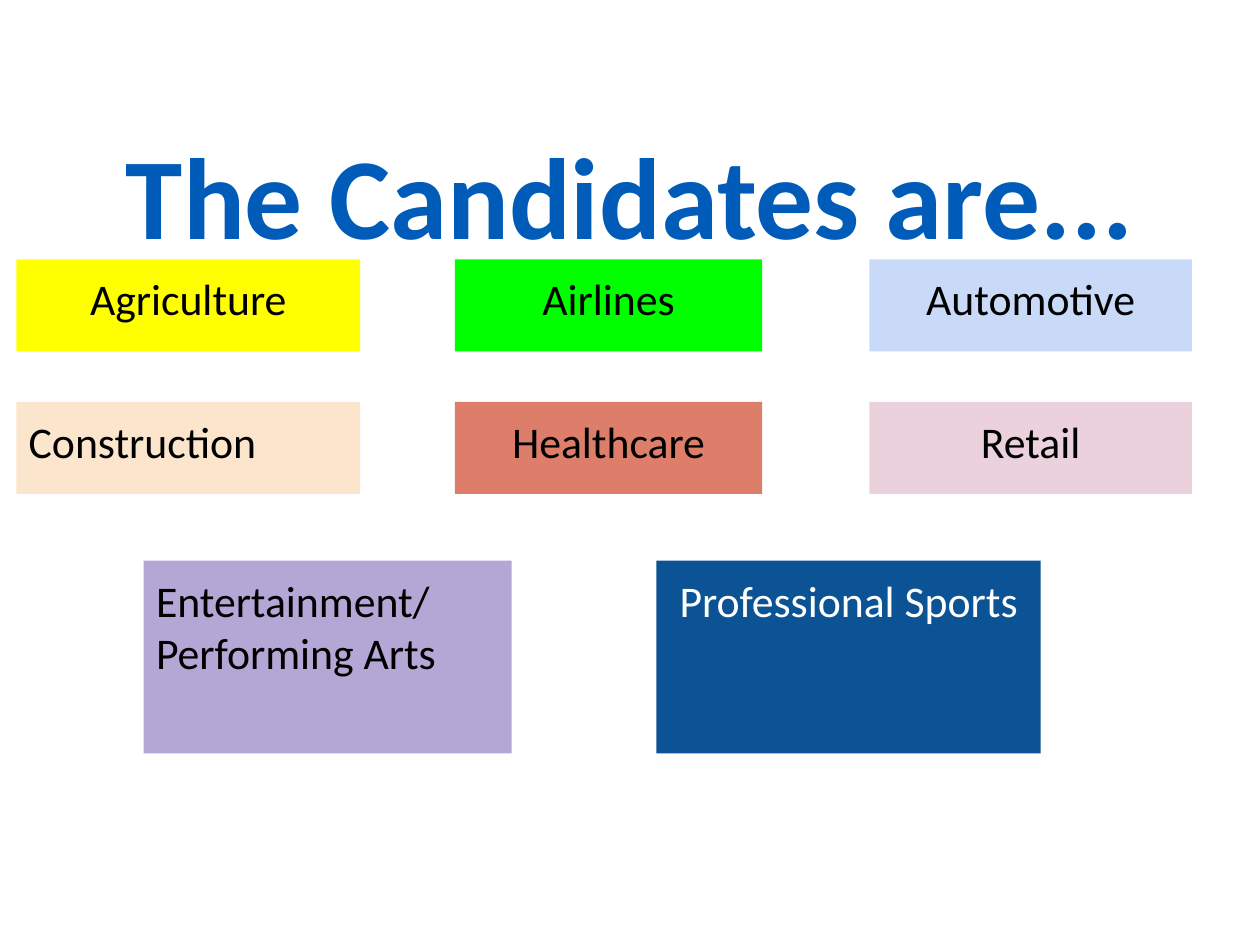
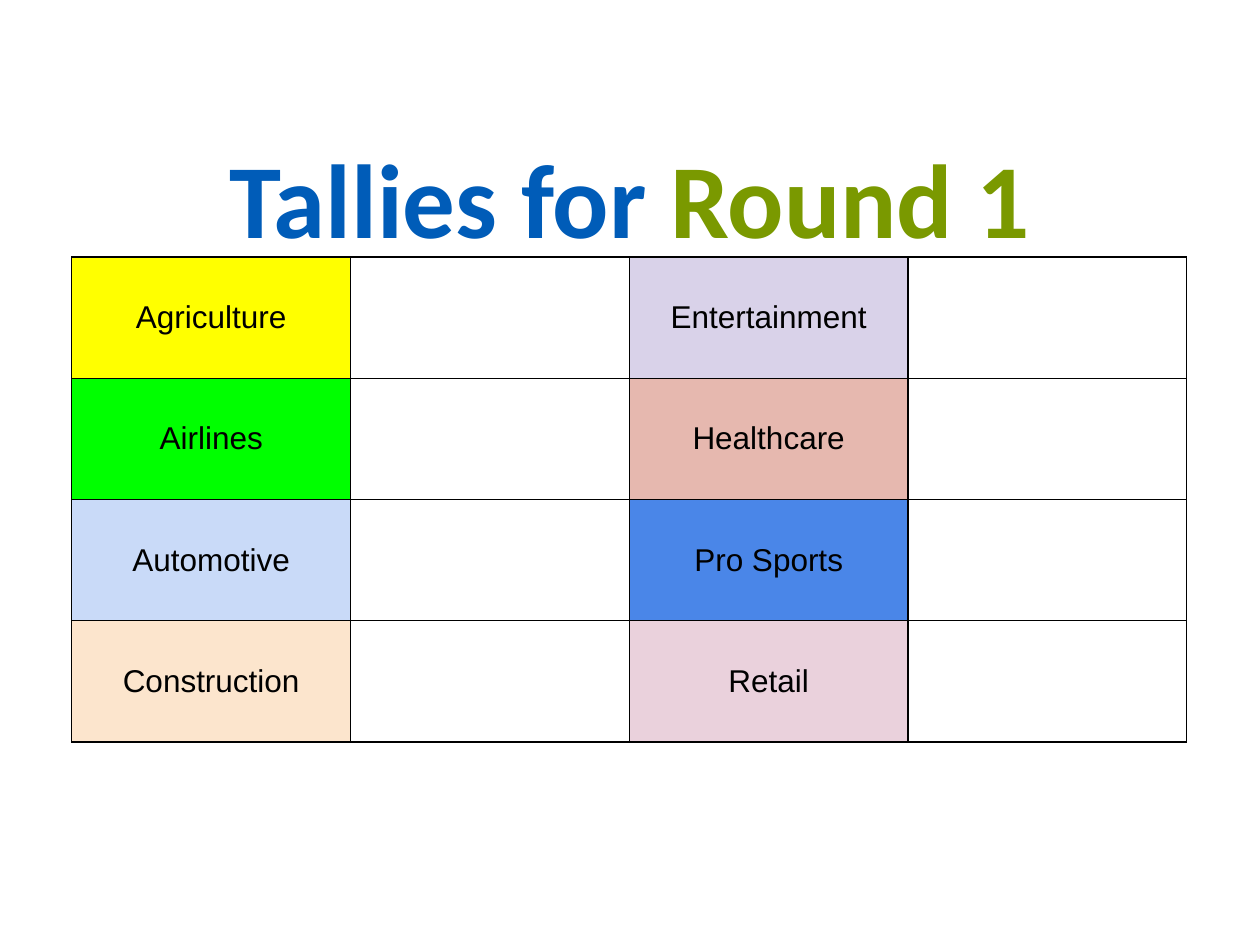
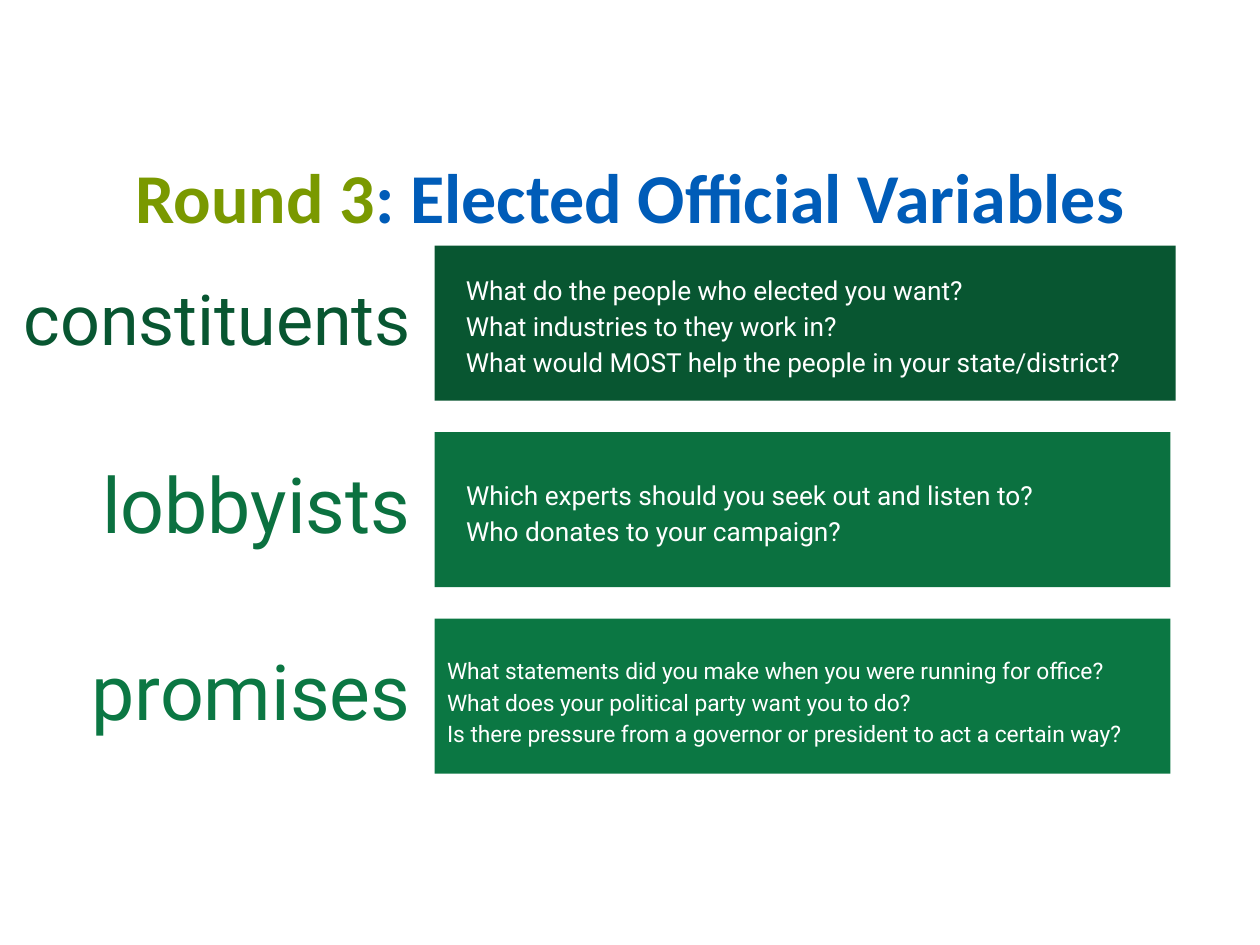
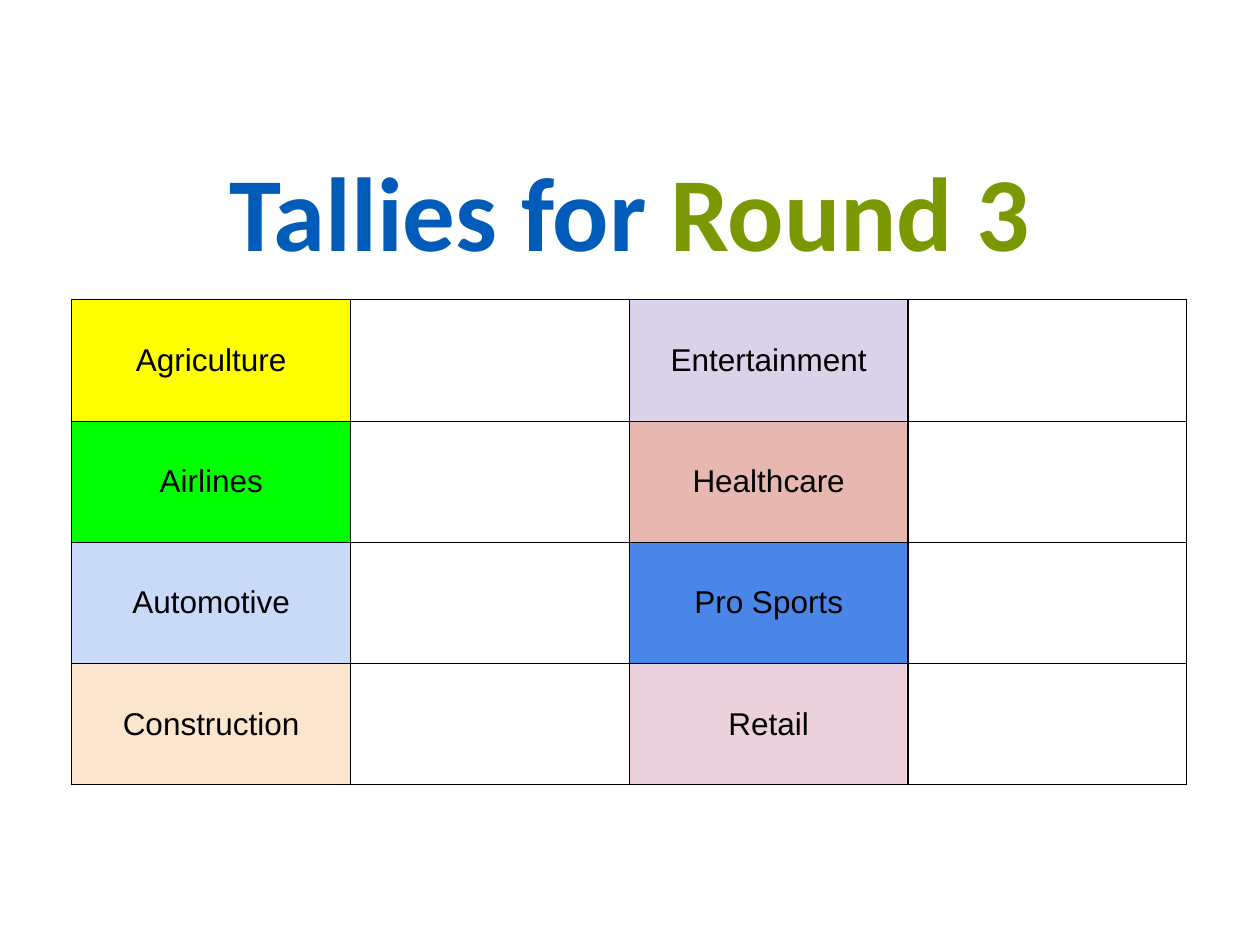
from dataclasses import dataclass

from lxml.etree import SubElement
from pptx import Presentation
from pptx.dml.color import RGBColor
from pptx.enum.shapes import MSO_SHAPE
from pptx.enum.text import MSO_ANCHOR, PP_ALIGN
from pptx.oxml.ns import qn
from pptx.util import Inches, Pt


@dataclass(frozen=True)
class Theme:
    """Colours, fonts and type sizes shared by the slides."""
    blue: str = "005CB8"
    olive: str = "7A9900"
    black: str = "000000"
    white: str = "FFFFFF"
    yellow: str = "FFFF00"
    lime: str = "00FF00"
    sky: str = "C9DAF8"
    peach: str = "FCE5CD"
    coral: str = "DD7E6B"
    pink: str = "EAD1DC"
    purple: str = "B4A7D6"
    navy: str = "0B5394"
    lilac: str = "D9D2E9"
    salmon: str = "E6B8AF"
    azure: str = "4A86E8"
    greens: tuple = ("085631", "0B7140", "0B7743")
    heading: str = "Calibri"
    table: str = "Arial"
    variable: str = "Roboto"
    card_size: int = 25
    table_size: int = 18
    tally_size: int = 60
    title_line: int = 57


T = Theme()
COLUMNS, ROWS = 10, 7.5
CARD_COLUMNS = ((0.13, 2.73), (3.61, 2.44), (6.9, 2.56))
WIDE_COLUMNS = ((1.14, 2.92), (5.21, 3.05))
CARD_TOP, CARD_PITCH, CARD_HEIGHT = 2.06, 1.13, 0.73
WIDE_TOP, WIDE_HEIGHT = 4.45, 1.53
BAND_LEFT, BAND_TOP, BAND_PITCH, BAND_HEIGHT = 3.45, 1.95, 1.48, 1.23
LABEL_RIGHT, LABEL_HEIGHT = 3.36, 1.06
TABLE_LEFT, TABLE_WIDTH, TABLE_HEIGHT = 0.57, 8.85, 3.85

TALLIES = (
    (("Agriculture", T.yellow), ("Entertainment", T.lilac)),
    (("Airlines", T.lime), ("Healthcare", T.salmon)),
    (("Automotive", T.sky), ("Pro Sports", T.azure)),
    (("Construction", T.peach), ("Retail", T.pink)),
)


def grid(*cells):
    """Turn columns and rows of the one-inch grid into lengths."""
    return [Inches(c) for c in cells]


def style(font, name, size, color, bold=False):
    """Set the look of a font."""
    font.name, font.size, font.bold = name, Pt(size), bold
    font.color.rgb = RGBColor.from_string(color)


def write(s, lines, name, size, color, align=PP_ALIGN.LEFT, anchor=MSO_ANCHOR.TOP,
          spacing=None, inset=0.1):
    """Fill a shape with one paragraph per line."""
    tf = s.text_frame
    tf.word_wrap, tf.vertical_anchor = True, anchor
    tf.margin_left = tf.margin_right = Inches(0.1)
    tf.margin_top = tf.margin_bottom = Inches(inset)
    tf.text = "\n".join(lines)
    for p in tf.paragraphs:
        p.alignment, p.line_spacing = align, spacing
        for r in p.runs:
            style(r.font, name, size, color)


def add_title(slide, top, size, *parts):
    """Add a centred bold title made of coloured parts."""
    s = slide.shapes.add_textbox(*grid(0.34, top, 9.32, 0.88))
    write(s, [""], T.heading, size, T.blue, PP_ALIGN.CENTER, spacing=Pt(T.title_line))
    for text, color in parts:
        r = s.text_frame.paragraphs[0].add_run()
        r.text = text
        style(r.font, T.heading, size, color, bold=True)


def add_block(slide, fill, *place):
    """Add a plain filled rectangle."""
    s = slide.shapes.add_shape(MSO_SHAPE.RECTANGLE, *grid(*place))
    s.shadow.inherit = False
    s.fill.solid()
    s.fill.fore_color.rgb = RGBColor.from_string(fill)
    s.line.fill.background()
    return s


def add_card(slide, place, fill, lines, align=PP_ALIGN.CENTER, color=T.black):
    """Add a candidate card."""
    s = add_block(slide, fill, *place)
    write(s, lines, T.heading, T.card_size, color, align)


def add_cell_borders(cell):
    """Draw thin black lines on the four sides of a cell."""
    tc_pr = cell._tc.get_or_add_tcPr()
    for i, side in enumerate(("a:lnL", "a:lnR", "a:lnT", "a:lnB")):
        ln = SubElement(tc_pr, qn(side), w=str(Pt(0.75)))
        fill = SubElement(ln, qn("a:solidFill"))
        SubElement(fill, qn("a:srgbClr"), val=T.black)
        tc_pr.remove(ln)
        tc_pr.insert(i, ln)


def add_tallies(slide, top):
    """Add the tally table with an empty cell beside each industry."""
    place = grid(TABLE_LEFT, top, TABLE_WIDTH, TABLE_HEIGHT)
    table = slide.shapes.add_table(len(TALLIES), 4, *place).table
    table.first_row = table.horz_banding = False
    for row, pairs in enumerate(TALLIES):
        for col in range(4):
            cell = table.cell(row, col)
            cell.fill.background()
            add_cell_borders(cell)
        for i, (text, fill) in enumerate(pairs):
            cell = table.cell(row, 2 * i)
            cell.fill.solid()
            cell.fill.fore_color.rgb = RGBColor.from_string(fill)
            cell.vertical_anchor = MSO_ANCHOR.MIDDLE
            cell.margin_top = cell.margin_bottom = Inches(0.1)
            cell.text = text
            p = cell.text_frame.paragraphs[0]
            p.alignment = PP_ALIGN.CENTER
            style(p.runs[0].font, T.table, T.table_size, T.black)


def add_variable(slide, row, label, label_size, label_width, band_width, text_place,
                 text_size, questions):
    """Add a label and its band of questions."""
    color = T.greens[row]
    top = BAND_TOP + row * BAND_PITCH
    s = slide.shapes.add_textbox(*grid(LABEL_RIGHT - label_width, top + 0.08,
                                       label_width, LABEL_HEIGHT))
    write(s, [label], T.variable, label_size, color, PP_ALIGN.RIGHT,
          MSO_ANCHOR.MIDDLE, 0.9, 0.05)
    add_block(slide, color, BAND_LEFT, top, band_width, BAND_HEIGHT)
    left, offset, width, height = text_place
    s = slide.shapes.add_textbox(*grid(left, top + offset, width, height))
    write(s, questions, T.variable, text_size, T.white, anchor=MSO_ANCHOR.MIDDLE,
          spacing=1.15, inset=0.05)


def build_candidates(slide):
    """Build the slide of candidate industries."""
    add_title(slide, 1.19, 66, ("The Candidates are...", T.blue))
    cards = (
        (("Agriculture", T.yellow), ("Airlines", T.lime), ("Automotive", T.sky)),
        (("Construction", T.peach), ("Healthcare", T.coral), ("Retail", T.pink)),
    )
    for row, line in enumerate(cards):
        top = CARD_TOP + row * CARD_PITCH
        for (left, width), (text, fill) in zip(CARD_COLUMNS, line):
            align = PP_ALIGN.LEFT if text == "Construction" else PP_ALIGN.CENTER
            add_card(slide, (left, top, width, CARD_HEIGHT), fill, [text], align)
    arts, sports = [(left, WIDE_TOP, width, WIDE_HEIGHT) for left, width in WIDE_COLUMNS]
    add_card(slide, arts, T.purple, ["Entertainment/", "Performing Arts"], PP_ALIGN.LEFT)
    add_card(slide, sports, T.navy, ["Professional Sports"], color=T.white)


def build_tally(slide, round_name, title_top, table_top):
    """Build a tally slide for one round."""
    add_title(slide, title_top, T.tally_size, ("Tallies for ", T.blue), (round_name, T.olive))
    add_tallies(slide, table_top)


def build_variables(slide):
    """Build the slide of variables for elected officials."""
    add_title(slide, 0.99, 40, ("Round 3", T.olive), (": Elected Official Variables", T.blue))
    add_variable(slide, 0, "constituents", 40, 3.5, 5.88, (3.6, 0.14, 5.73, 0.96), 15, [
        "What do the people who elected you want?",
        "What industries to they work in?",
        "What would MOST help the people in your state/district?"])
    add_variable(slide, 1, "lobbyists", 44, 3.26, 5.84, (3.6, 0.35, 5.69, 0.55), 15, [
        "Which experts should you seek out and listen to?",
        "Who donates to your campaign?"])
    add_variable(slide, 2, "promises", 44, 2.8, 5.84, (3.45, 0.03, 5.73, 1.23), 13, [
        "What statements did you make when you were running for office?",
        "What does your political party want you to do?",
        "Is there pressure from a governor or president to act a certain way?"])


def main():
    """Build and save the presentation."""
    prs = Presentation()
    prs.slide_width, prs.slide_height = grid(COLUMNS, ROWS)
    slides = [prs.slides.add_slide(prs.slide_layouts[6]) for _ in range(4)]
    build_candidates(slides[0])
    build_tally(slides[1], "Round 1", 1.17, 2.04)
    build_variables(slides[2])
    build_tally(slides[3], "Round 3", 1.27, 2.38)
    prs.save("out.pptx")


if __name__ == "__main__":
    main()
